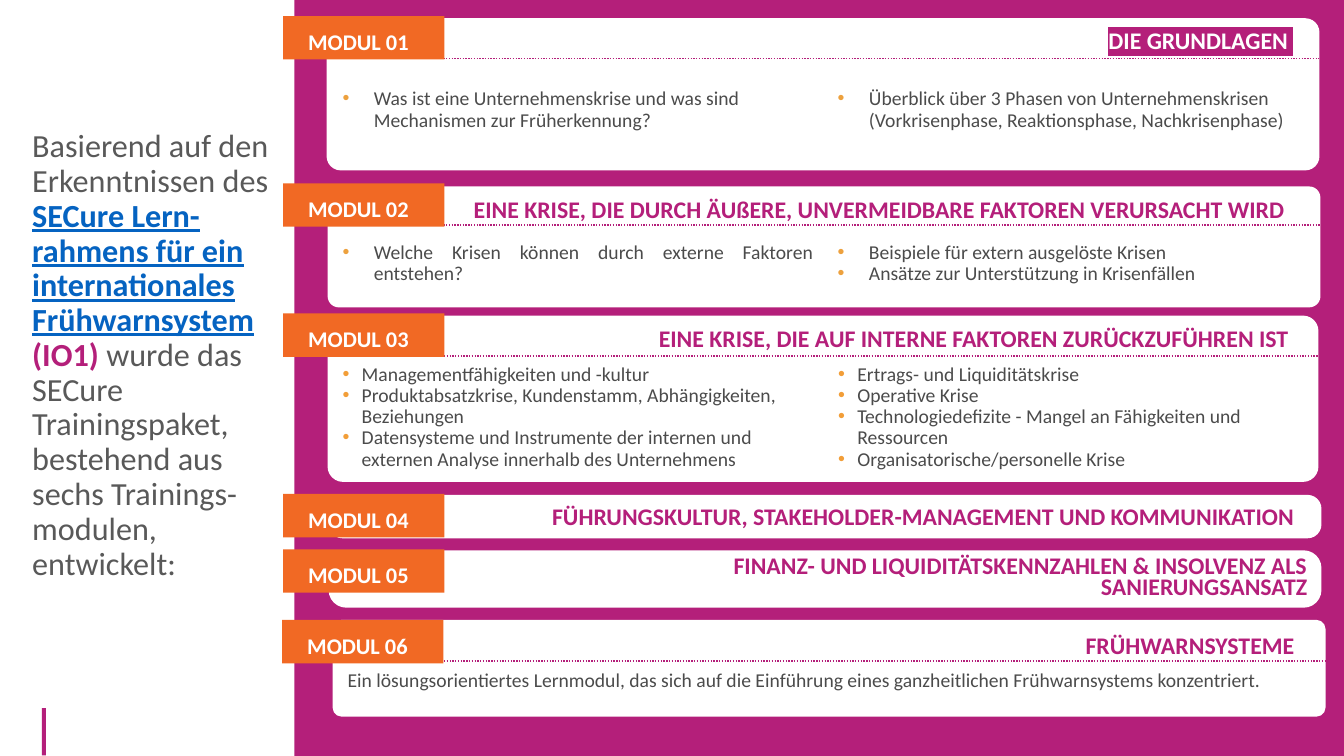
"""Build the slide that lists the six training modules."""
import pptx
import pptx.dml.color
import pptx.enum.dml
import pptx.enum.shapes
import pptx.enum.text
import pptx.oxml
import pptx.oxml.ns
import pptx.util

Pt = pptx.util.Pt
SHAPES = pptx.enum.shapes.MSO_SHAPE
ALIGN = pptx.enum.text.PP_ALIGN
ANCHOR = pptx.enum.text.MSO_ANCHOR
FIT = pptx.enum.text.MSO_AUTO_SIZE

PURPLE, ORANGE, WHITE = "B41F7A", "F16924", "FFFFFF"
GREY, BLUE, TEXT = "595959", "0563C1", "4B4B4B"
TAG_WIDTH, TAG_HEIGHT, TAG_INDENT = 115.2, 31, 10.8
COLUMN_GAP = 17.3

INTRO_BOX = (15.8, 89.3, 185.8, 353.5)
INTRO = [
    ("Basierend auf den Erkenntnissen des ", GREY, {}),
    ("SECure Lern-rahmens für ein internationales Frühwarnsystem ", BLUE,
     {"bold": True, "underline": True}),
    ("(IO1) ", PURPLE, {"bold": True}),
    ("wurde das SECure Trainingspaket, bestehend aus sechs Trainings-modulen, entwickelt:",
     GREY, {}),
]

MODULES = [
    {"title": "DIE GRUNDLAGEN ", "highlight": PURPLE, "color": WHITE,
     "tag": (202.3, 11.5), "panel": (233.3, 13, 709.2, 108.7), "corner": 0.093,
     "head": (460.8, 15.1, 470.2, 28.1), "rule": (233.3, 942.5, 41.8),
     "body": (237.6, 59.8, 704.2, 43.2), "bullet": ("EDA13E", 22.3), "align": ALIGN.LEFT,
     "points": [
         "Was ist eine Unternehmenskrise und was sind Mechanismen zur Früherkennung?",
         "Überblick über 3 Phasen von Unternehmenskrisen "
         "(Vorkrisenphase, Reaktionsphase, Nachkrisenphase)"]},
    {"title": "EINE KRISE, DIE DURCH ÄUßERE, UNVERMEIDBARE FAKTOREN VERURSACHT WIRD ",
     "tag": (202.3, 131), "panel": (234, 133.2, 709.2, 86.4), "corner": 0.093,
     "head": (322.6, 135.4, 606.2, 28.1), "rule": (233.3, 946.8, 160.6),
     "body": (237.6, 169.2, 704.2, 43.2), "bullet": ("EDA13E", 22.3), "align": ALIGN.JUSTIFY,
     "points": [
         "Welche Krisen können durch externe Faktoren entstehen?",
         "Beispiele für extern ausgelöste Krisen",
         "Ansätze zur Unterstützung in Krisenfällen"]},
    {"title": "EINE KRISE, DIE AUF INTERNE FAKTOREN ZURÜCKZUFÜHREN IST ",
     "tag": (202.3, 223.9), "panel": (234, 225.4, 707.8, 118.8), "corner": 0.093,
     "head": (461.5, 227.5, 470.2, 28.1), "rule": (231.8, 941.8, 254.2),
     "body": (237.6, 256.3, 704.9, 85), "bullet": ("F29E38", 13.7), "align": ALIGN.LEFT,
     "points": [
         "Managementfähigkeiten und -kultur",
         "Produktabsatzkrise, Kundenstamm, Abhängigkeiten, Beziehungen",
         "Datensysteme und Instrumente der internen und externen Analyse "
         "innerhalb des Unternehmens",
         "Ertrags- und Liquiditätskrise",
         "Operative Krise",
         "Technologiedefizite - Mangel an Fähigkeiten und Ressourcen",
         "Organisatorische/personelle Krise"]},
    {"title": "FÜHRUNGSKULTUR, STAKEHOLDER-MANAGEMENT UND KOMMUNIKATION",
     "tag": (202.3, 352.8), "panel": (234.7, 353.5, 709.2, 31), "corner": 0.319,
     "head": (276.5, 355, 655.2, 28.1)},
    {"title": "FINANZ- UND LIQUIDITÄTSKENNZAHLEN & INSOLVENZ ALS SANIERUNGSANSATZ",
     "tag": (202.3, 392.4), "panel": (234.7, 393.1, 709.2, 41), "corner": 0.309,
     "head": (460.8, 394.6, 480.2, 38.2), "spacing": Pt(15.4)},
    {"title": "FRÜHWARNSYSTEME",
     "tag": (201.6, 442.8), "panel": (237.6, 442.8, 709.2, 69.1), "corner": 0.093,
     "head": (277.9, 447.1, 653.8, 28.1), "rule": (231.8, 946.8, 472.3),
     "body": (241.2, 475.2, 699.8, 41.8), "align": ALIGN.JUSTIFY,
     "points": [
         "Ein lösungsorientiertes Lernmodul, das sich auf die Einführung eines "
         "ganzheitlichen Frühwarnsystems konzentriert. "]},
]


def rgb(value):
    return pptx.dml.color.RGBColor.from_string(value)


def set_format(target, values):
    for name, value in values.items():
        setattr(target, name, value)


def add_xml(parent, markup):
    namespace = pptx.oxml.ns.nsdecls("a")
    tag, rest = markup.split(" ", 1)
    parent.append(pptx.oxml.parse_xml(f"<{tag} {namespace} {rest}"))


def set_indent(para, left, first):
    properties = para._p.get_or_add_pPr()
    properties.set("marL", str(Pt(left)))
    properties.set("indent", str(Pt(first)))
    return properties


def add_block(slide, kind, place, fill):
    block = slide.shapes.add_shape(kind, *map(Pt, place))
    block.shadow.inherit = False
    block.fill.solid()
    block.fill.fore_color.rgb = rgb(fill)
    block.line.fill.background()
    return block


def add_textbox(slide, place):
    box = slide.shapes.add_textbox(*map(Pt, place))
    set_format(box.text_frame, {"word_wrap": True, "auto_size": FIT.NONE})
    return box


def add_span(para, text, size, color, values):
    span = para.add_run()
    span.text = text
    set_format(span.font, {"name": "Calibri", "size": Pt(size), **values})
    span.font.color.rgb = rgb(color)
    return span


def add_intro(slide):
    box = slide.placeholders[1]
    names = ("left", "top", "width", "height")
    set_format(box, dict(zip(names, map(Pt, INTRO_BOX))))
    box.fill.solid()
    box.fill.fore_color.rgb = rgb(WHITE)
    box.line.color.rgb = rgb(WHITE)
    box.line.width = Pt(0.75)
    set_format(box.text_frame, {"word_wrap": True, "auto_size": FIT.NONE,
                                "vertical_anchor": ANCHOR.TOP})
    para = box.text_frame.paragraphs[0]
    add_xml(set_indent(para, 0, 0), "a:buNone />")
    set_format(para, {"line_spacing": 0.9, "space_before": Pt(0), "alignment": ALIGN.LEFT})
    for text, color, values in INTRO:
        add_span(para, text, 23, color, values)


def add_points(slide, module):
    frame = add_textbox(slide, module["body"]).text_frame
    if "bullet" in module:
        frame._txBody.bodyPr.set("numCol", "2")
        frame._txBody.bodyPr.set("spcCol", str(Pt(COLUMN_GAP)))
    for number, text in enumerate(module["points"]):
        para = frame.add_paragraph() if number else frame.paragraphs[0]
        if "bullet" in module:
            color, indent = module["bullet"]
            properties = set_indent(para, indent, -indent)
            add_xml(properties, f'a:buClr ><a:srgbClr val="{color}"/></a:buClr>')
            add_xml(properties, 'a:buFont typeface="Arial"/>')
            add_xml(properties, 'a:buChar char="•"/>')
        set_format(para, {"line_spacing": Pt(15.2), "alignment": module["align"]})
        add_span(para, text, 14, TEXT, {})


def add_head(slide, module):
    para = add_textbox(slide, module["head"]).text_frame.paragraphs[0]
    set_format(para, {"alignment": ALIGN.RIGHT, "line_spacing": module.get("spacing")})
    span = add_span(para, module["title"], 17, module.get("color", PURPLE), {"bold": True})
    if "highlight" in module:
        properties = span.font._element
        add_xml(properties, f'a:highlight ><a:srgbClr val="{module["highlight"]}"/></a:highlight>')
        properties.insert(1, properties[-1])


def add_rule(slide, start, end, height):
    straight = pptx.enum.shapes.MSO_CONNECTOR.STRAIGHT
    rule = slide.shapes.add_connector(straight, Pt(start), Pt(height), Pt(end), Pt(height))
    rule.line.color.rgb = rgb(PURPLE)
    set_format(rule.line, {"width": Pt(1),
                           "dash_style": pptx.enum.dml.MSO_LINE.ROUND_DOT})
    add_xml(rule._element.spPr, "a:effectLst />")


def add_tag(slide, number, place):
    tag = add_block(slide, SHAPES.RECTANGLE, (*place, TAG_WIDTH, TAG_HEIGHT), ORANGE)
    tag.text_frame.vertical_anchor = ANCHOR.MIDDLE
    para = tag.text_frame.paragraphs[0]
    set_indent(para, TAG_INDENT, 0)
    set_format(para, {"alignment": ALIGN.LEFT, "line_spacing": Pt(24.4)})
    add_span(para, f"MODUL {number:02}", 16, WHITE, {"bold": True})


def main():
    deck = pptx.Presentation()
    set_format(deck, {"slide_width": Pt(960), "slide_height": Pt(540)})
    slide = deck.slides.add_slide(deck.slide_layouts[1])
    title = slide.shapes.title._element
    title.getparent().remove(title)
    add_block(slide, SHAPES.RECTANGLE, (29.9, 505.8, 2.9, 33.8), PURPLE)
    add_block(slide, SHAPES.RECTANGLE, (210.2, 0, 749.8, 540), PURPLE)
    add_intro(slide)
    for module in MODULES:
        panel = add_block(slide, SHAPES.ROUNDED_RECTANGLE, module["panel"], WHITE)
        panel.adjustments[0] = module["corner"]
        if "points" in module:
            add_points(slide, module)
        add_head(slide, module)
        if "rule" in module:
            add_rule(slide, *module["rule"])
    for number, module in enumerate(MODULES, 1):
        add_tag(slide, number, module["tag"])
    deck.save("out.pptx")


if __name__ == "__main__":
    main()
